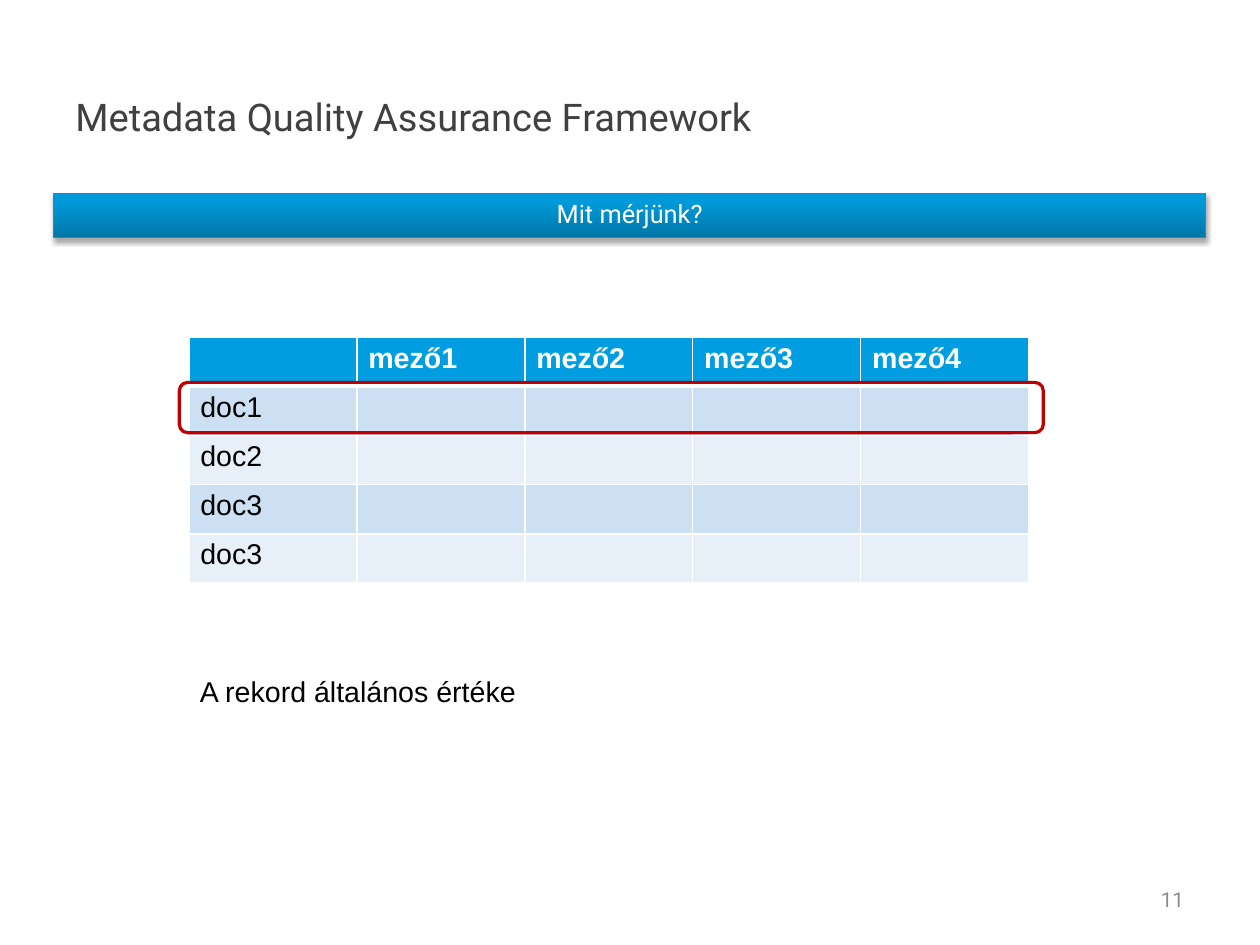
from copy import deepcopy
from lxml import etree
from pptx import Presentation
from pptx.dml.color import RGBColor
from pptx.enum import shapes as kinds, text as te
from pptx.oxml import ns, parse_xml
from pptx.util import Pt

HUES = {"title": "404040", "page": "8C8C8C", "white": "FFFFFF", "black": "000000",
        "head": "009EE0", "odd": "CCDFF3", "even": "E7F0F9", "edge": "009BDB", "mark": "C00000"}
FADE = [(0, "0076A7"), (0.8, "0099D9"), (1, "009ADA")]
HEADS = ["", "mező1", "mező2", "mező3", "mező4"]
DOCS = ["doc1", "doc2", "doc3", "doc3"]
LEFT, MID, RIGHT = te.PP_ALIGN.LEFT, te.PP_ALIGN.CENTER, te.PP_ALIGN.RIGHT
TOP, CORE = te.MSO_ANCHOR.TOP, te.MSO_ANCHOR.MIDDLE
LABELS = [
    ("Metadata Quality Assurance Framework", (39.6, 23.3, 501.1, 99.4),
     (7.9, 4.3), CORE, LEFT, "Roboto", 24, "title", 1),
    ("11", (568.8, 550.5, 185, 31.7), (7.9, 4.3), CORE, RIGHT, "Roboto", 13, "page", 1),
    ("A rekord általános értéke", (118.8, 423.7, 529.2, 25.9),
     (7.2, 3.6), TOP, LEFT, "Arial", 18, "black", 0.87),
]
BANNER = "Mit mérjünk?"
PAGE = (793.75, 595.25)
BAR = (33.8, 121.7, 725.8, 28.1)
GRID = (119, 212.4)
COL, ROW = 105.84, 29.2
RING = (113, 240.9, 544.3, 31.7)


def hue(name):
    return RGBColor.from_string(HUES[name])


def write(frame, words, font, size, color, align=LEFT, gap=0.87, bold=False):
    frame.text = words
    para = frame.paragraphs[0]
    para.alignment, para.line_spacing = align, gap
    for run in para.runs:
        face = run.font
        face.name, face.size, face.bold = font, Pt(size), bold
        face.color.rgb = hue(color)


def label(slide, words, box, pad, anchor, align, font, size, color, gap):
    frame = slide.shapes.add_textbox(*map(Pt, box)).text_frame
    frame.word_wrap, frame.vertical_anchor = True, anchor
    frame.margin_left = frame.margin_right = Pt(pad[0])
    frame.margin_top = frame.margin_bottom = Pt(pad[1])
    write(frame, words, font, size, color, align, gap)


def banner(slide):
    bar = slide.shapes.add_shape(kinds.MSO_SHAPE.RECTANGLE, *map(Pt, BAR))
    bar.fill.gradient()
    bar.fill.gradient_angle = 90
    stops = bar._element.spPr.find(".//" + ns.qn("a:gsLst"))
    stops.append(deepcopy(stops[-1]))
    for stop, (place, code) in zip(bar.fill.gradient_stops, FADE):
        stop.position, stop.color.rgb = place, RGBColor.from_string(code)
    bar.line.color.rgb, bar.line.width = hue("edge"), Pt(0.75)
    bar.shadow.inherit = False
    glow = bar._element.spPr.find(ns.qn("a:effectLst"))
    glow.append(parse_xml(
        f'<a:outerShdw {ns.nsdecls("a")} blurRad="{Pt(3.1)}" dist="{Pt(1.8)}" dir="5400000" '
        f'rotWithShape="0"><a:srgbClr val="{HUES["black"]}"><a:alpha val="35000"/>'
        '</a:srgbClr></a:outerShdw>'))
    bar.text_frame.vertical_anchor = CORE
    write(bar.text_frame, BANNER, "Roboto", 16, "white", MID)


def border(cell, row):
    wide = {"L": 1, "R": 1, "T": 3 if row == 1 else 1, "B": 3 if row == 0 else 1}
    props = cell._tc.get_or_add_tcPr()
    for side, width in wide.items():
        line = etree.SubElement(props, ns.qn("a:ln" + side), w=str(Pt(width)))
        fill = etree.SubElement(line, ns.qn("a:solidFill"))
        etree.SubElement(fill, ns.qn("a:srgbClr"), val=HUES["white"])


def grid(slide):
    rows = [HEADS] + [[doc] + [""] * (len(HEADS) - 1) for doc in DOCS]
    size = (COL * len(HEADS), ROW * len(rows))
    table = slide.shapes.add_table(len(rows), len(HEADS), *map(Pt, GRID + size)).table
    for r, words in enumerate(rows):
        table.rows[r].height = Pt(ROW)
        tint = "head" if r == 0 else "odd" if r % 2 else "even"
        for c, word in enumerate(words):
            cell = table.cell(r, c)
            border(cell, r)
            cell.margin_top = Pt(5.4)
            cell.fill.solid()
            cell.fill.fore_color.rgb = hue(tint)
            write(cell.text_frame, word, "Arial", 18, "black" if r else "white", bold=r == 0)


def ring(slide):
    mark = slide.shapes.add_shape(kinds.MSO_SHAPE.ROUNDED_RECTANGLE, *map(Pt, RING))
    mark.shadow.inherit = False
    mark.fill.background()
    mark.line.color.rgb, mark.line.width = hue("mark"), Pt(2)


def main():
    """Build the slide on measuring metadata records."""
    deck = Presentation()
    deck.slide_width, deck.slide_height = map(Pt, PAGE)
    slide = deck.slides.add_slide(deck.slide_layouts[6])
    banner(slide)
    grid(slide)
    ring(slide)
    for item in LABELS:
        label(slide, *item)
    deck.save("out.pptx")


if __name__ == "__main__":
    main()
